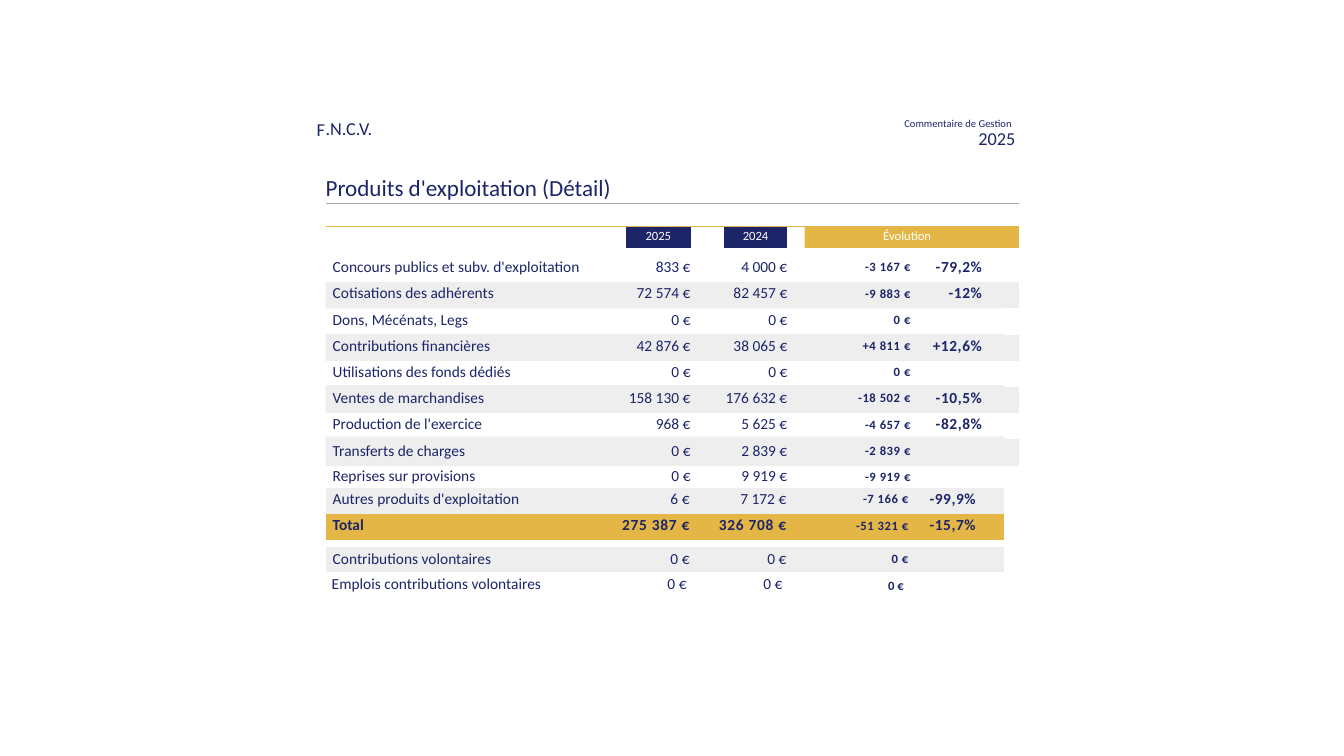
from pptx import Presentation
from pptx.dml.color import RGBColor
from pptx.enum import shapes, text
from pptx.oxml import parse_xml
from pptx.oxml.ns import nsdecls, qn
from pptx.util import Inches, Pt


class Theme:
    font = "Calibri"
    navy, gold, band, rule, white = "1D2569", "E4B645", "EEEEEE", "A6A6A6", "FFFFFF"
    title, head, body, small, note, tiny = 16.5, 13, 11, 9, 7.5, 6
    grid = "{2D5ABB26-0587-4C30-8999-92F81FD0307C}"  # no style, no grid


TITLE = "Produits d'exploitation (Détail)"
YEARS = ("2025", "2024")
DETAIL = [
    ("Concours publics et subv. d'exploitation", "833 €", "4 000 €", "-3 167 €", "-79,2%"),
    ("Cotisations des adhérents", "72 574 €", "82 457 €", "-9 883 €", "-12%"),
    ("Dons, Mécénats, Legs", "0 €", "0 €", "0 €", ""),
    ("Contributions financières", "42 876 €", "38 065 €", "+4 811 €", "+12,6%"),
    ("Utilisations des fonds dédiés", "0 €", "0 €", "0 €", ""),
    ("Ventes de marchandises", "158 130 €", "176 632 €", "-18 502 €", "-10,5%"),
    ("Production de l'exercice", "968 €", "5 625 €", "-4 657 €", "-82,8%"),
    ("Transferts de charges", "0 €", "2 839 €", "-2 839 €", ""),
    ("Reprises sur provisions", "0 €", "9 919 €", "-9 919 €", ""),
]
SUMS = [
    ("Autres produits d'exploitation", "6 €", "7 172 €", "-7 166 €", "-99,9%"),
    ("Total", "275 387 €", "326 708 €", "-51 321 €", "-15,7%"),
    ("Contributions volontaires", "0 €", "0 €", "0 €", ""),
]
# text, left, top, width, height, inset, size, bold
BOXES = [
    ("F", 3.14, 1.15, 0.11, 0.25, 0.02, Theme.head, False),
    ("Emplois contributions volontaires", 3.29, 5.69, 2.11, 0.21, 0.01, Theme.body, False),
    ("0 €", 6.62, 5.69, 0.22, 0.21, 0.01, Theme.body, False),
    ("0 €", 7.57, 5.69, 0.22, 0.21, 0.01, Theme.body, False),
    ("0 €", 8.81, 5.72, 0.2, 0.18, 0.01, Theme.small, True),
]
LEFT = 3.23
RIGHT = text.PP_ALIGN.RIGHT


def style(par, size, color=Theme.navy, bold=False, gap=0, align=text.PP_ALIGN.LEFT):
    """Format a paragraph; gap is the letter spacing in points."""
    par.alignment = align
    for run in par.runs:
        run.font.name, run.font.size, run.font.bold = Theme.font, Pt(size), bold
        run.font.color.rgb = RGBColor.from_string(color)
        if gap:
            run._r.get_or_add_rPr().set("spc", str(round(gap * 100)))


def inset(item, left=0, top=0, right=0):
    item.margin_left, item.margin_top = Inches(left), Inches(top)
    item.margin_right, item.margin_bottom = Inches(right), 0


def paint(item, color):
    item.fill.solid()
    item.fill.fore_color.rgb = RGBColor.from_string(color)


def write(cell, words, size, left=0, top=0, right=0, **look):
    inset(cell, left, top, right)
    par = cell.text_frame.paragraphs[0]
    par.text = words
    style(par, size, **look)
    return par


def line(row, color, width):
    """Draw the bottom border of a row."""
    for cell in row.cells:
        cell._tc.get_or_add_tcPr().insert(0, parse_xml(
            f'<a:lnB {nsdecls("a")} w="{Pt(width)}"><a:solidFill>'
            f'<a:srgbClr val="{color}"/></a:solidFill></a:lnB>'))


def grid(slide, top, cols, rows):
    """Add a plain table whose empty cells do not stretch their rows."""
    frame = slide.shapes.add_table(len(rows), len(cols), Inches(LEFT), Inches(top),
                                   Inches(sum(cols)), Inches(sum(rows)))
    table = frame.table
    table.first_row = table.horz_banding = False
    table._tbl.tblPr.find(qn("a:tableStyleId")).text = Theme.grid
    for col, width in zip(table.columns, cols):
        col.width = Inches(width)
    for row, height in zip(table.rows, rows):
        row.height = Inches(height)
        for cell in row.cells:
            inset(cell)
            cell.fill.background()
            end = cell.text_frame.paragraphs[0]._p.get_or_add_endParaRPr()
            end.set("sz", str(Theme.tiny * 100))
    return table


def entry(row, data, spots, rights, top, fill=None, bold=False):
    """Write label, two years, change and rate into the columns in spots."""
    if fill:
        for cell in row.cells:
            paint(cell, fill)
    name, now, past, change, rate = (row.cells[spot] for spot in spots)
    write(name, data[0], Theme.body, 0.07, top, bold=bold)
    for cell, words, right in zip((now, past), data[1:3], rights):
        write(cell, words, Theme.body, 0, top, right, bold=bold,
              gap=0.5 if bold else 0, align=RIGHT)
    write(change, data[3], Theme.small, 0, top + 0.02, rights[2],
          bold=True, gap=0.4, align=RIGHT)
    if data[4]:
        end = rights[3]
        write(rate, data[4], Theme.body, 0 if end else 0.11, top, end or 0,
              bold=True, gap=0.4, align=RIGHT if end else text.PP_ALIGN.LEFT)


def detail(slide):
    table = grid(slide, 1.21, [2.98, 0.64, 0.33, 0.63, 0.2, 1.23, 0.87],
                 [0.81, 0.23, 0.21, 0.34] + [0.26] * 7 + [0.21])
    club = write(table.cell(0, 0), ".N.C.V.", Theme.head)
    club.line_spacing = Pt(12.8)
    note = table.cell(0, 5)
    note.merge(table.cell(0, 6))
    par = write(note, "Commentaire de Gestion", Theme.note, right=0.04)
    par._p.get_or_add_pPr().set("marL", str(Inches(0.96)))
    par.line_spacing = Pt(6.2)
    year = note.text_frame.add_paragraph()
    year.text = YEARS[0]
    year.line_spacing = Pt(14.4)
    style(year, Theme.head, align=RIGHT)
    for spot, words in zip((1, 3), YEARS):
        cell = table.cell(2, spot)
        paint(cell, Theme.navy)
        write(cell, words, Theme.small, top=0.02, color=Theme.white,
              align=text.PP_ALIGN.CENTER)
    for spot in (5, 6):
        paint(table.cell(2, spot), Theme.gold)
    write(table.cell(2, 5), "Évolution", Theme.small, 0.75, 0.02, color=Theme.white)
    for n, data in enumerate(DETAIL):
        entry(table.rows[n + 3], data, (0, 1, 3, 5, 6), (0, 0, 0.21, 0.37),
              0.02 if n else 0.1, Theme.band if n % 2 else None)
    for spot in (0, 1, 3):
        table.cell(11, spot).text_frame.paragraphs[0].line_spacing = Pt(12.8)
    line(table.rows[0], Theme.rule, 0.75)
    line(table.rows[1], Theme.gold, 0.75)


def sums(slide):
    table = grid(slide, 4.84, [2.41, 1.32, 1.16, 0.99, 0.85], [0.26, 0.29, 0.29])
    for n, data in enumerate(SUMS):
        total = data[0] == "Total"
        entry(table.rows[n], data, range(5), (0.12, 0.32, 0.1, None),
              0.06 if n == 2 else 0.02, Theme.gold if total else Theme.band, total)
    line(table.rows[1], Theme.white, 6)


def bar(slide, left, top, width, height, color):
    shape = slide.shapes.add_shape(shapes.MSO_SHAPE.RECTANGLE, Inches(left),
                                   Inches(top), Inches(width), Inches(height))
    shape.shadow.inherit = False
    shape.line.fill.background()
    paint(shape, color)


def place(shape, words, left, top, width, height, gap, size, bold=False):
    shape.left, shape.top = Inches(left), Inches(top)
    shape.width, shape.height = Inches(width), Inches(height)
    frame = shape.text_frame
    frame.text = words
    frame.word_wrap = False
    frame.auto_size = text.MSO_AUTO_SIZE.NONE
    inset(frame, 0, gap)
    style(frame.paragraphs[0], size, bold=bold)


def main():
    deck = Presentation()
    deck.slide_width, deck.slide_height = Inches(13.33), Inches(7.5)
    slide = deck.slides.add_slide(deck.slide_layouts[5])
    title = slide.shapes.title
    place(title, TITLE, LEFT, 1.71, 4, 0.29, 0, Theme.title)
    title.text_frame.vertical_anchor = text.MSO_ANCHOR.MIDDLE
    bar(slide, 7.98, 2.25, 1.97, 0.21, Theme.gold)
    for n in range(4):
        bar(slide, LEFT, 2.8 + 0.51 * n, 6.73, 0.26, Theme.band)
    detail(slide)
    sums(slide)
    for box in BOXES:
        place(slide.shapes.add_textbox(0, 0, 0, 0), *box)
    deck.save("out.pptx")


if __name__ == "__main__":
    main()
